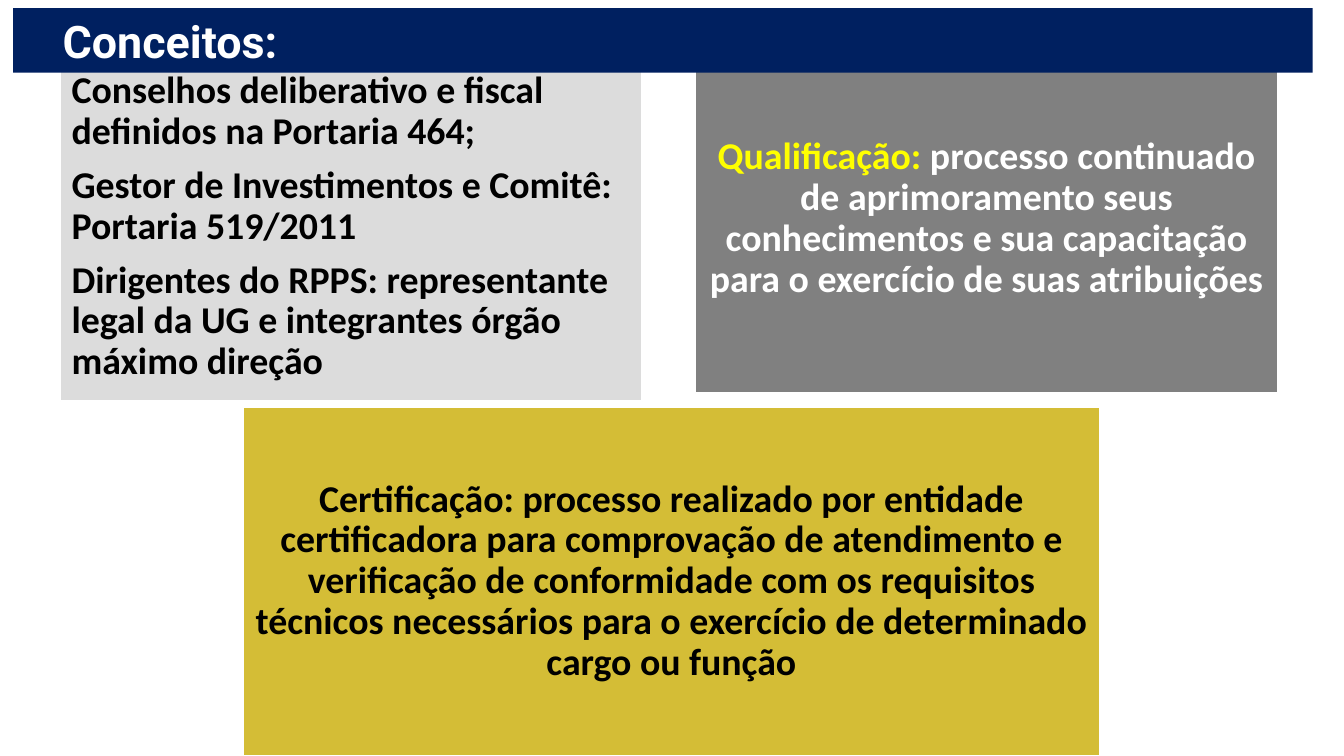
import pptx
import pptx.dml.color
import pptx.enum.shapes
import pptx.enum.text
import pptx.util
from pptx.util import Inches

COLOURS = {
    "navy": "002060",
    "light_gray": "DCDCDC",
    "gray": "808080",
    "gold": "D4BD36",
    "yellow": "FFFF00",
    "white": "FFFFFF",
    "black": "000000",
}
ALIGN = pptx.enum.text.PP_ALIGN
CONCEPT_HEIGHT = 3.46
CONCEPTS = [
    ((0.6, 0.52, 5.77), "light_gray", ALIGN.LEFT, [
        [("Conselhos deliberativo e fiscal definidos na Portaria 464;", "black")],
        [("Gestor de Investimentos e Comitê: Portaria 519/2011", "black")],
        [("Dirigentes do RPPS: representante legal da UG e integrantes órgão "
          "máximo direção", "black")],
    ]),
    ((6.9, 0.44, 5.77), "gray", ALIGN.CENTER, [
        [("Qualificação: ", "yellow"),
         ("processo continuado de aprimoramento seus conhecimentos e sua "
          "capacitação para o exercício de suas atribuições", "white")],
    ]),
    ((2.41, 4.04, 8.5), "gold", ALIGN.CENTER, [
        [("Certificação: processo realizado por entidade certificadora para "
          "comprovação de atendimento e verificação de conformidade com os "
          "requisitos técnicos necessários para o exercício de determinado "
          "cargo ou função", "black")],
    ]),
]


def colour(name):
    return pptx.dml.color.RGBColor.from_string(COLOURS[name])


def apply_format(target, values):
    for name, value in values.items():
        setattr(target, name, value)


def add_box(slide, position, fill, inset):
    shape = slide.shapes.add_shape(
        pptx.enum.shapes.MSO_SHAPE.RECTANGLE, *map(Inches, position))
    shape.shadow.inherit = False
    shape.fill.solid()
    shape.fill.fore_color.rgb = colour(fill)
    shape.line.fill.background()
    apply_format(shape.text_frame, {
        "word_wrap": True,
        "vertical_anchor": pptx.enum.text.MSO_ANCHOR.MIDDLE,
        **{f"margin_{side}": Inches(inset[side]) for side in inset},
    })
    return shape


def add_run(paragraph, text, color, font, size):
    run = paragraph.add_run()
    run.text = text
    apply_format(run.font, {"name": font, "size": pptx.util.Pt(size), "bold": True})
    run.font.color.rgb = colour(color)


def add_concept(slide, place, fill, alignment, paragraphs):
    inset = dict.fromkeys(("left", "top", "right", "bottom"), 0.11)
    shape = add_box(slide, (*place, CONCEPT_HEIGHT), fill, inset)
    shape.line.color.rgb = colour("white")
    shape.line.width = pptx.util.Pt(1)
    frame = shape.text_frame
    for index, runs in enumerate(paragraphs):
        paragraph = frame.add_paragraph() if index else frame.paragraphs[0]
        apply_format(paragraph, {
            "alignment": alignment,
            "line_spacing": 0.9,
            "space_after": pptx.util.Pt(9.45),
        })
        for text, color in runs:
            add_run(paragraph, text, color, "Calibri", 27)


def add_title_banner(slide, title):
    inset = {"left": 0.49, "top": 0.05, "right": 0.1, "bottom": 0.05}
    shape = add_box(slide, (0.13, 0.08, 12.89, 0.64), "navy", inset)
    paragraph = shape.text_frame.paragraphs[0]
    paragraph.alignment = ALIGN.LEFT
    add_run(paragraph, title, "white", "Roboto", 32)


def main():
    presentation = pptx.Presentation()
    apply_format(presentation, {
        "slide_width": Inches(13.33),
        "slide_height": Inches(7.5),
    })
    slide = presentation.slides.add_slide(presentation.slide_layouts[6])
    for concept in CONCEPTS:
        add_concept(slide, *concept)
    add_title_banner(slide, "Conceitos:")
    presentation.save("out.pptx")


if __name__ == "__main__":
    main()
